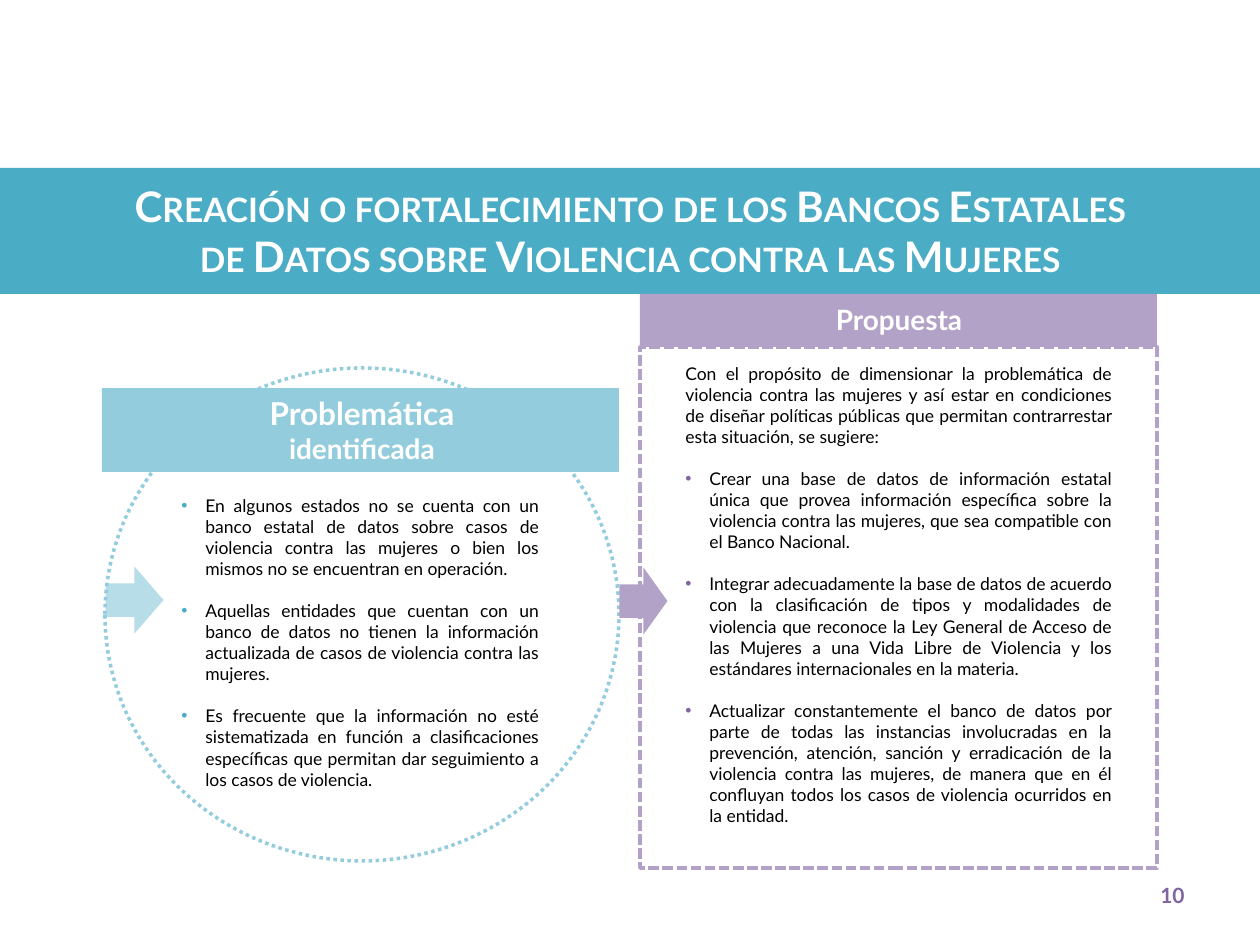
import pptx
import pptx.util
import pptx.dml.color
import pptx.enum.dml
import pptx.enum.shapes
import pptx.enum.text
import lxml.etree

SCALE = 914400 / 126
KIND = pptx.enum.shapes.MSO_SHAPE
DASH = pptx.enum.dml.MSO_LINE
ALIGN = pptx.enum.text.PP_ALIGN
TEAL, SKY, PALE = "4BACC6", "93CDDD", "B7DEE8"
LILAC, PLUM = "B3A2C7", "8064A2"
WHITE, BLACK = "FFFFFF", "000000"

TITLE = [
    "Creación o fortalecimiento de los Bancos Estatales",
    "de Datos sobre Violencia contra las Mujeres",
]
ISSUES = [
    "En algunos estados no se cuenta con un banco estatal de datos sobre casos de "
    "violencia contra las mujeres o bien los mismos no se encuentran en operación.",
    "Aquellas entidades que cuentan con un banco de datos no tienen la información "
    "actualizada de casos de violencia contra las mujeres.",
    "Es frecuente que la información no esté sistematizada en función a clasificaciones "
    "específicas que permitan dar seguimiento a los casos de violencia.",
]
INTRO = (
    "Con el propósito de dimensionar la problemática de violencia contra las mujeres y "
    "así estar en condiciones de diseñar políticas públicas que permitan contrarrestar "
    "esta situación, se sugiere:"
)
PLANS = [
    "Crear una base de datos de información estatal única que provea información "
    "específica sobre la violencia contra las mujeres, que sea compatible con el Banco "
    "Nacional.",
    "Integrar adecuadamente la base de datos de acuerdo con la clasificación de tipos y "
    "modalidades de violencia que reconoce la Ley General de Acceso de las Mujeres a una "
    "Vida Libre de Violencia y los estándares internacionales en la materia.",
    "Actualizar constantemente el banco de datos por parte de todas las instancias "
    "involucradas en la prevención, atención, sanción y erradicación de la violencia "
    "contra las mujeres, de manera que en él confluyan todos los casos de violencia "
    "ocurridos en la entidad.",
]


def px(num):
    return pptx.util.Emu(round(num * SCALE))


def hue(code):
    return pptx.dml.color.RGBColor.from_string(code)


def apply(item, form):
    for name, value in form.items():
        setattr(item, name, value)


def shape(slide, kind, spot, fill=None, line=None, dash=None, turn=0):
    item = slide.shapes.add_shape(kind, *map(px, spot))
    item.shadow.inherit = False
    item.rotation = turn
    if fill:
        item.fill.solid()
        item.fill.fore_color.rgb = hue(fill)
    else:
        item.fill.background()
    if line:
        item.line.color.rgb = hue(line)
        apply(item.line, {"width": pptx.util.Pt(2), "dash_style": dash})
    else:
        item.line.fill.background()


def frame(slide, spot):
    body = slide.shapes.add_textbox(*map(px, spot)).text_frame
    body.word_wrap = True
    return body


def write(body, text, size, color, align, bold=False, small=False, gap=0):
    first = not body.paragraphs[0].runs
    para = body.paragraphs[0] if first else body.add_paragraph()
    para.alignment = align
    if gap and not first:
        para.space_before = pptx.util.Pt(gap)
    run = para.add_run()
    run.text = text
    apply(run.font, {"name": "Lato", "size": pptx.util.Pt(size), "bold": bold})
    run.font.color.rgb = hue(color)
    if small:
        run.font._element.set("cap", "small")
    return para


def bullet(para, color):
    props = para._p.get_or_add_pPr()
    props.set("marL", str(px(24)))
    props.set("indent", str(px(-24)))
    space = pptx.oxml.ns.qn
    tint = lxml.etree.SubElement(props, space("a:buClr"))
    lxml.etree.SubElement(tint, space("a:srgbClr"), val=color)
    lxml.etree.SubElement(props, space("a:buFont"), typeface="Arial")
    lxml.etree.SubElement(props, space("a:buChar"), char="•")


def points(body, texts, color):
    for text in texts:
        bullet(write(body, text, 10, BLACK, ALIGN.JUSTIFY, gap=12), color)


def main():
    deck = pptx.Presentation()
    apply(deck, {"slide_width": px(1260), "slide_height": px(945)})
    slide = deck.slides.add_slide(deck.slide_layouts[6])

    shape(slide, KIND.RECTANGLE, (0, 168, 1260, 126), TEAL)
    shape(slide, KIND.RECTANGLE, (640, 347, 517, 521), WHITE, LILAC, DASH.SQUARE_DOT)
    title = frame(slide, (53, 174, 1155, 115))
    for text in TITLE:
        write(title, text, 24, WHITE, ALIGN.CENTER, bold=True, small=True)

    points(frame(slide, (169, 489, 382, 310)), ISSUES, TEAL)
    plan = frame(slide, (673, 357, 451, 500))
    write(plan, INTRO, 10, BLACK, ALIGN.JUSTIFY)
    points(plan, PLANS, PLUM)

    shape(slide, KIND.RECTANGLE, (102, 388, 517, 84), SKY)
    head = frame(slide, (105, 388, 514, 84))
    for text, size in (("Problemática", 18), ("identificada", 16)):
        write(head, text, size, WHITE, ALIGN.CENTER, bold=True)
    shape(slide, KIND.RECTANGLE, (640, 294, 517, 53), LILAC)
    write(frame(slide, (789, 296, 220, 47)), "Propuesta", 16, WHITE, ALIGN.CENTER, bold=True)

    shape(slide, KIND.DOWN_ARROW, (101, 571, 67, 58), PALE, turn=270)
    shape(slide, KIND.OVAL, (105, 368, 514, 493), line=SKY, dash=DASH.ROUND_DOT)
    shape(slide, KIND.DOWN_ARROW, (610, 577, 67, 48), LILAC, turn=270)
    write(frame(slide, (903, 876, 294, 50)), "10", 12, PLUM, ALIGN.RIGHT, bold=True)
    deck.save("out.pptx")


if __name__ == "__main__":
    main()
